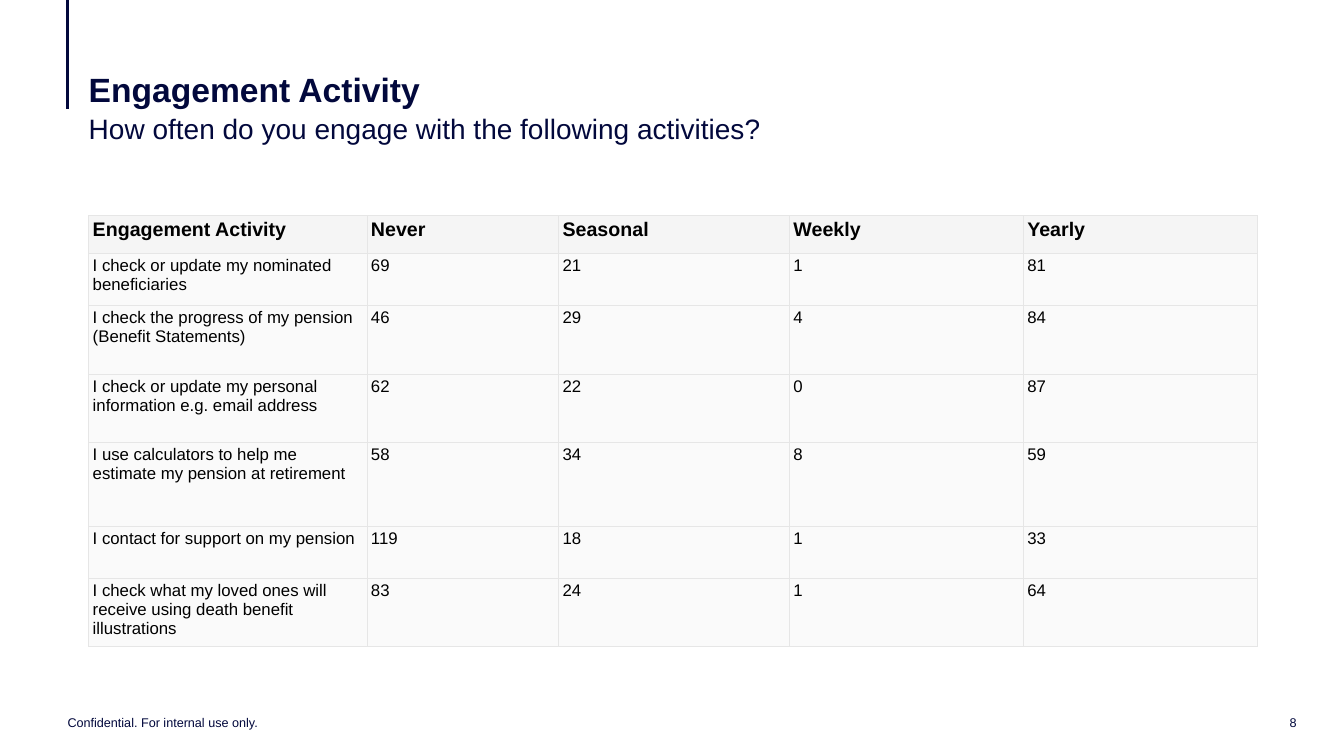
from pptx import Presentation
from pptx.dml.color import RGBColor
from pptx.enum.shapes import MSO_CONNECTOR
from pptx.enum.text import MSO_ANCHOR, MSO_AUTO_SIZE, PP_ALIGN
from pptx.oxml.ns import qn
from pptx.util import Inches, Pt
from lxml.etree import SubElement

FONT = "Arial"
NAVY = RGBColor(0x02, 0x08, 0x3C)
BLACK = RGBColor(0x00, 0x00, 0x00)
HEADER_FILL = RGBColor(0xF5, 0xF5, 0xF5)
BODY_FILL = RGBColor(0xFA, 0xFA, 0xFA)
BORDER = RGBColor(0xE6, 0xE6, 0xE6)

COLUMN_WIDTHS = [2.76, 1.9, 2.29, 2.32, 2.32]
ROW_HEIGHTS = [0.37, 0.52, 0.68, 0.68, 0.83, 0.52, 0.67]
ROWS = [
    ("Engagement Activity", "Never", "Seasonal", "Weekly", "Yearly"),
    ("I check or update my nominated beneficiaries", 69, 21, 1, 81),
    ("I check the progress of my pension (Benefit Statements)", 46, 29, 4, 84),
    ("I check or update my personal information e.g. email address", 62, 22, 0, 87),
    ("I use calculators to help me estimate my pension at retirement", 58, 34, 8, 59),
    ("I contact for support on my pension", 119, 18, 1, 33),
    ("I check what my loved ones will receive using death benefit illustrations",
     83, 24, 1, 64),
]


def add_run(paragraph, text, size, color=NAVY, bold=False):
    run = paragraph.add_run()
    run.text = text
    run.font.name = FONT
    run.font.size = Pt(size)
    run.font.bold = bold
    run.font.color.rgb = color


def fill_text(shape, box, text, size, anchor, align=PP_ALIGN.LEFT, bold=False):
    """Place a text shape without insets and write one paragraph in it."""
    shape.left, shape.top, shape.width, shape.height = map(Inches, box)
    frame = shape.text_frame
    frame.word_wrap = True
    frame.auto_size = MSO_AUTO_SIZE.NONE
    frame.vertical_anchor = anchor
    frame.margin_left = frame.margin_top = frame.margin_right = frame.margin_bottom = 0
    paragraph = frame.paragraphs[0]
    paragraph.alignment = align
    add_run(paragraph, text, size, bold=bold)
    return paragraph


def add_footer(slide, box, text, align):
    shape = slide.shapes.add_textbox(*map(Inches, box))
    fill_text(shape, box, text, 9, MSO_ANCHOR.MIDDLE, align)


def remove_bullet(paragraph):
    properties = paragraph._p.get_or_add_pPr()
    properties.set("marL", "0")
    properties.set("indent", "0")
    SubElement(properties, qn("a:buNone"))


def add_accent_line(slide):
    line = slide.shapes.add_connector(
        MSO_CONNECTOR.STRAIGHT, Inches(0.67), 0, Inches(0.67), Inches(1.08))
    line.line.color.rgb = NAVY
    line.line.width = Pt(2.75)
    SubElement(line._element.spPr, qn("a:effectLst"))


def set_borders(cell):
    properties = cell._tc.get_or_add_tcPr()
    for side in ("a:lnL", "a:lnR", "a:lnT", "a:lnB"):
        line = SubElement(properties, qn(side), w=str(Pt(0.5)))
        fill = SubElement(line, qn("a:solidFill"))
        SubElement(fill, qn("a:srgbClr"), val=str(BORDER))


def format_cell(cell, text, header):
    set_borders(cell)
    cell.fill.solid()
    cell.fill.fore_color.rgb = HEADER_FILL if header else BODY_FILL
    cell.margin_left = Inches(0.04)
    cell.margin_top = cell.margin_right = cell.margin_bottom = Inches(0.03)
    add_run(cell.text_frame.paragraphs[0], text, 14 if header else 12, BLACK, header)


def add_activity_table(slide):
    table = slide.shapes.add_table(
        len(ROWS), len(COLUMN_WIDTHS), Inches(0.88), Inches(2.14),
        Inches(sum(COLUMN_WIDTHS)), Inches(sum(ROW_HEIGHTS))).table
    table.horz_banding = False
    for column, width in zip(table.columns, COLUMN_WIDTHS):
        column.width = Inches(width)
    for row_index, (row, height) in enumerate(zip(table.rows, ROW_HEIGHTS)):
        row.height = Inches(height)
        for cell, value in zip(row.cells, ROWS[row_index]):
            format_cell(cell, str(value), header=row_index == 0)


def main():
    presentation = Presentation()
    presentation.slide_width = Inches(13.33)
    presentation.slide_height = Inches(7.5)
    slide = presentation.slides.add_slide(presentation.slide_layouts[1])

    # Heading
    add_accent_line(slide)
    title = fill_text(slide.shapes.title, (0.88, 0.26, 11.57, 0.83),
                      "Engagement Activity", 24, MSO_ANCHOR.BOTTOM, bold=True)
    title.line_spacing = 0.9
    question = fill_text(slide.placeholders[1], (0.88, 1.11, 11.57, 0.65),
                         "How often do you engage with the following activities?",
                         20, MSO_ANCHOR.TOP)
    question.space_before = Pt(18)
    remove_bullet(question)

    # Answers
    add_activity_table(slide)

    # Footer
    add_footer(slide, (0.67, 7.09, 4.5, 0.16),
               "Confidential. For internal use only.", PP_ALIGN.LEFT)
    add_footer(slide, (12.47, 7.09, 0.39, 0.16), "8", PP_ALIGN.RIGHT)

    presentation.save("out.pptx")


if __name__ == "__main__":
    main()
